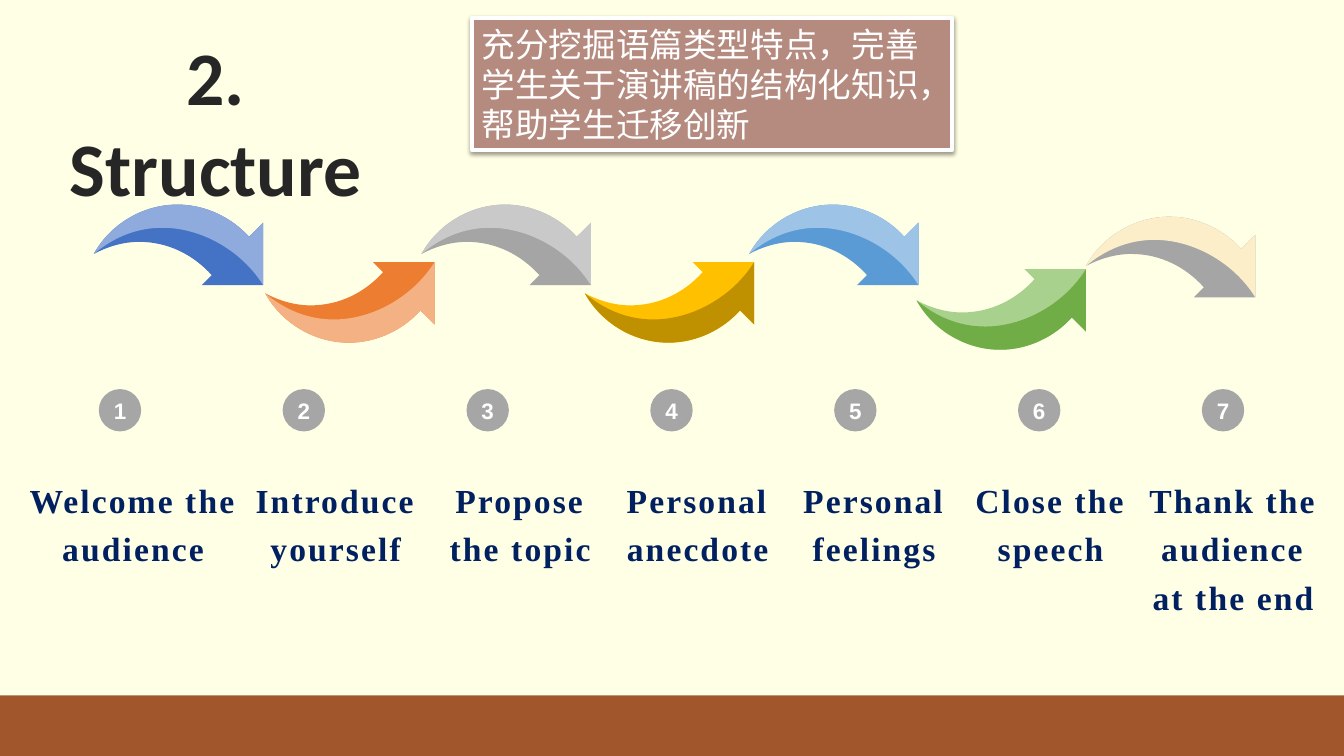
import pptx
import pptx.util
import pptx.dml.color
import pptx.enum.shapes
import pptx.enum.text
import pptx.oxml
from lxml import etree

Inches = pptx.util.Inches
Pt = pptx.util.Pt
RGB = pptx.dml.color.RGBColor
SHAPE = pptx.enum.shapes.MSO_SHAPE
ALIGN = pptx.enum.text.PP_ALIGN
MIDDLE = pptx.enum.text.MSO_ANCHOR.MIDDLE
GROW = pptx.enum.text.MSO_AUTO_SIZE.SHAPE_TO_FIT_TEXT
NS = "http://schemas.openxmlformats.org/drawingml/2006/main"

WHITE = RGB(0xFF, 0xFF, 0xFF)
CREAM = RGB(0xFF, 0xFF, 0xE5)
BROWN = RGB(0xA1, 0x56, 0x2C)
ROSE = RGB(0xB5, 0x8B, 0x80)
INK = RGB(0x26, 0x26, 0x26)
NAVY = RGB(0x00, 0x20, 0x60)
BADGE_GREY = RGB(0xA6, 0xA6, 0xA6)
BLUE, PALE_BLUE = RGB(0x44, 0x72, 0xC4), RGB(0x8F, 0xAA, 0xDC)
ORANGE, PALE_ORANGE = RGB(0xED, 0x7D, 0x31), RGB(0xF4, 0xB1, 0x83)
GREY, PALE_GREY = RGB(0xA5, 0xA5, 0xA5), RGB(0xC9, 0xC9, 0xC9)
GOLD, DARK_GOLD = RGB(0xFF, 0xC0, 0x00), RGB(0xBF, 0x90, 0x00)
SKY, PALE_SKY = RGB(0x5B, 0x9B, 0xD5), RGB(0x9D, 0xC3, 0xE6)
PALE_GREEN, GREEN = RGB(0xA9, 0xD1, 0x8E), RGB(0x70, 0xAD, 0x47)
SAND = RGB(0xFB, 0xEE, 0xC9)

# left, top, flipped, body colour, crest colour
ARROWS = [
    (0.93, 2.03, False, BLUE, PALE_BLUE),
    (2.63, 2.6, True, ORANGE, PALE_ORANGE),
    (4.18, 2.03, False, GREY, PALE_GREY),
    (5.8, 2.6, True, GOLD, DARK_GOLD),
    (7.43, 2.03, False, SKY, PALE_SKY),
    (9.09, 2.67, True, PALE_GREEN, GREEN),
    (10.77, 2.15, False, GREY, SAND),
]
# left, width, label
STEPS = [
    (0.11, 2.42, "Welcome the audience"),
    (2.35, 1.96, "Introduce yourself"),
    (4.18, 1.96, "Propose the topic"),
    (5.94, 1.96, "Personal anecdote"),
    (7.69, 1.96, "Personal feelings"),
    (9.44, 1.96, "Close the speech"),
    (11.25, 1.96, "Thank the audience at the end"),
]

# Arrow outlines in inches: one point is a corner, three points are a Bezier curve
ARROW_HEIGHT = 0.8
TIP, BARB, NOTCH = (1.68, 0.8), (1.68, 0.18), (1.54, 0.32)
BACK = [[(1.37, 0.13), (1.11, 0), (0.83, 0)], [(0.48, 0), (0.16, 0.2), (0, 0.49)]]
BODY = [[NOTCH], *BACK, [(0.13, 0.42), (0.29, 0.37), (0.45, 0.37)],
        [(0.74, 0.37), (0.99, 0.5), (1.17, 0.7)], [(1.07, 0.8)], [TIP], [BARB]]
CREST = [[BARB], [NOTCH], *BACK, [(0.19, 0.33), (0.42, 0.23), (0.68, 0.23)],
         [(1.07, 0.23), (1.47, 0.46), TIP]]


def write(tf, text, size, color, font="Calibri", bold=False, align=ALIGN.LEFT,
          line_spacing=None, tracking=None, wrap=True, grow=False):
    tf.word_wrap = wrap
    if grow:
        tf.auto_size = GROW
    p = tf.paragraphs[0]
    p.alignment = align
    p.line_spacing = line_spacing
    r = p.add_run()
    r.text = text
    r.font.size, r.font.name, r.font.bold = Pt(size), font, bold
    r.font.color.rgb = color
    if tracking:
        r.font._element.set("spc", str(int(tracking * 100)))
    return r


def add_block(s, kind, x, y, w, h, fill, line=None, line_width=0):
    sp = s.shapes.add_shape(kind, Inches(x), Inches(y), Inches(w), Inches(h))
    sp.shadow.inherit = False
    sp.fill.solid()
    sp.fill.fore_color.rgb = fill
    if line is None:
        sp.line.fill.background()
    else:
        sp.line.color.rgb = line
        sp.line.width = Pt(line_width)
    return sp


def add_text(s, x, y, w, h, text, **fmt):
    sp = s.shapes.add_textbox(Inches(x), Inches(y), Inches(w), Inches(h))
    return write(sp.text_frame, text, **fmt)


def add_outline(s, x, y, outline, color):
    """Build a closed outline whose bounds start at (x, y), then bend its curves."""
    parts = [[(Inches(px), Inches(py)) for px, py in part] for part in outline]
    ends = [part[-1] for part in parts]
    builder = s.shapes.build_freeform(*ends[0])
    builder.add_line_segments(ends[1:], close=True)
    sp = builder.convert_to_shape(Inches(x), Inches(y))
    segments = list(sp._element.iter(f"{{{NS}}}lnTo"))
    for segment, part in zip(segments, parts[1:]):
        if len(part) == 3:
            segment.tag = f"{{{NS}}}cubicBezTo"
            for i, (px, py) in enumerate(part[:2]):
                handle = etree.Element(f"{{{NS}}}pt", x=str(px), y=str(py))
                segment.insert(i, handle)
    sp.shadow.inherit = False
    sp.fill.solid()
    sp.fill.fore_color.rgb = color
    sp.line.fill.background()


def add_arrow(s, x, y, flipped, body, crest):
    for outline, color in ((BODY, body), (CREST, crest)):
        if flipped:
            outline = [[(px, ARROW_HEIGHT - py) for px, py in part] for part in outline]
        add_outline(s, x, y, outline, color)


def add_backdrop(s, w, h, band_height):
    top = h - band_height
    add_block(s, SHAPE.RECTANGLE, 0, top, w, band_height, BROWN, BROWN, 2)
    add_block(s, SHAPE.RECTANGLE, 0, 0, w, top, CREAM)


def add_title(s, x, y, w, h):
    r = add_text(s, x, y, w, h, "2. Structure", size=54, color=INK, bold=True,
                 align=ALIGN.CENTER, wrap=False, grow=True)
    border = pptx.oxml.parse_xml(
        f'<a:ln xmlns:a="{NS}" w="{Pt(1.06)}"><a:solidFill>'
        f'<a:srgbClr val="{WHITE}"/></a:solidFill></a:ln>')
    r.font._element.insert(0, border)


def add_banner(s, x, y, w, h):
    sp = add_block(s, SHAPE.RECTANGLE, x, y, w, h, ROSE, WHITE, 3)
    write(sp.text_frame, "充分挖掘语篇类型特点，完善学生关于演讲稿的结构化知识，帮助学生迁移创新",
          size=24, color=WHITE, grow=True)
    effects = sp._element.spPr.find(f"{{{NS}}}effectLst")
    shadow = etree.SubElement(effects, f"{{{NS}}}outerShdw", blurRad=str(Pt(3.1)),
                              dist=str(Pt(1.6)), dir="5400000", rotWithShape="0")
    black = etree.SubElement(shadow, f"{{{NS}}}srgbClr", val="000000")
    etree.SubElement(black, f"{{{NS}}}alpha", val="38000")


def add_badges(s, x, y, pitch, size):
    for i in range(len(STEPS)):
        sp = add_block(s, SHAPE.OVAL, x + i * pitch, y, size, size, BADGE_GREY)
        tf = sp.text_frame
        tf.margin_left = tf.margin_right = tf.margin_top = tf.margin_bottom = 0
        tf.vertical_anchor = MIDDLE
        write(tf, str(i + 1), size=16, color=WHITE, font="Arial", bold=True,
              align=ALIGN.CENTER)


def add_labels(s, y, h):
    for x, w, label in STEPS:
        add_text(s, x, y, w, h, label, size=24, color=NAVY, font="Times New Roman",
                 bold=True, align=ALIGN.CENTER, line_spacing=1.2, tracking=1.5)


def main():
    prs = pptx.Presentation()
    prs.slide_width, prs.slide_height = Inches(13.33), Inches(7.5)
    s = prs.slides.add_slide(prs.slide_layouts[6])
    add_backdrop(s, 13.33, 7.5, band_height=0.6)
    for arrow in ARROWS:
        add_arrow(s, *arrow)
    add_badges(s, 0.98, 3.86, pitch=10.94 / 6, size=0.42)
    add_labels(s, 4.63, 0.88)
    add_title(s, 0.22, 0.25, 3.84, 1.01)
    add_banner(s, 4.68, 0.18, 4.76, 1.31)
    prs.save("out.pptx")


if __name__ == "__main__":
    main()
